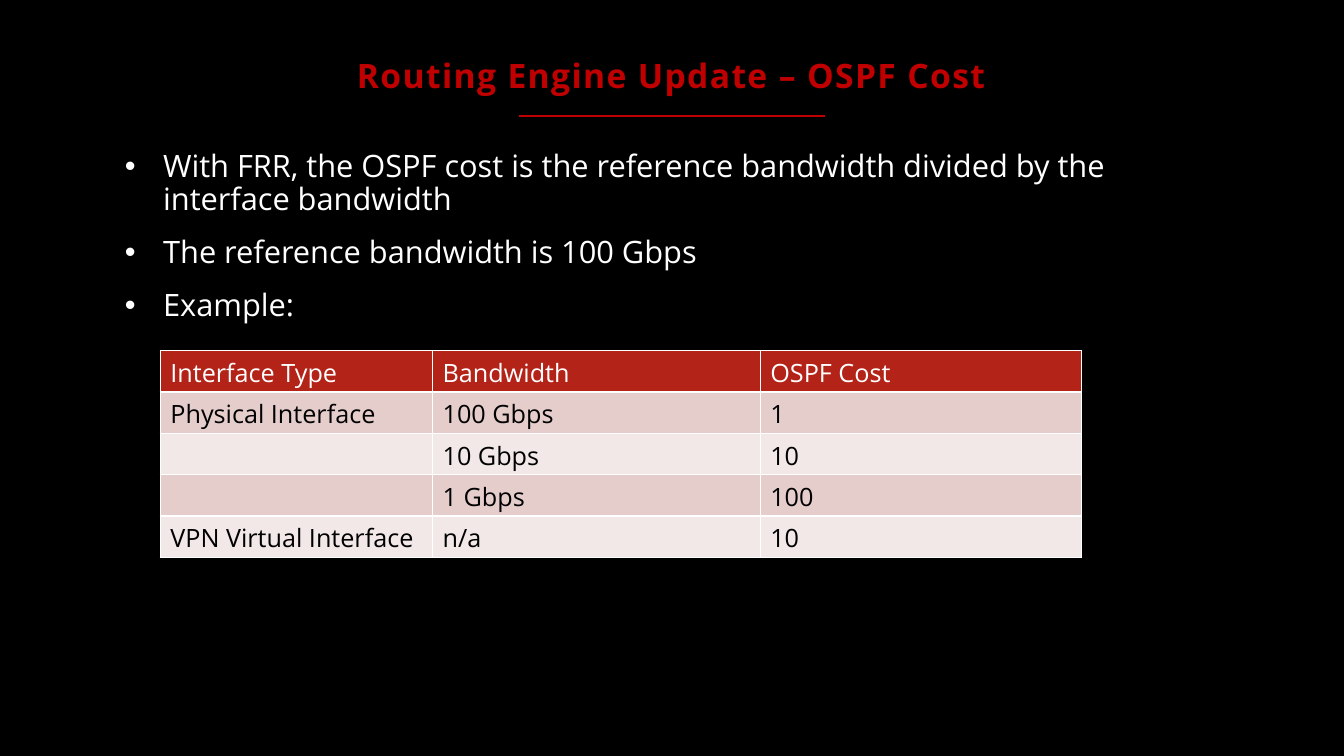
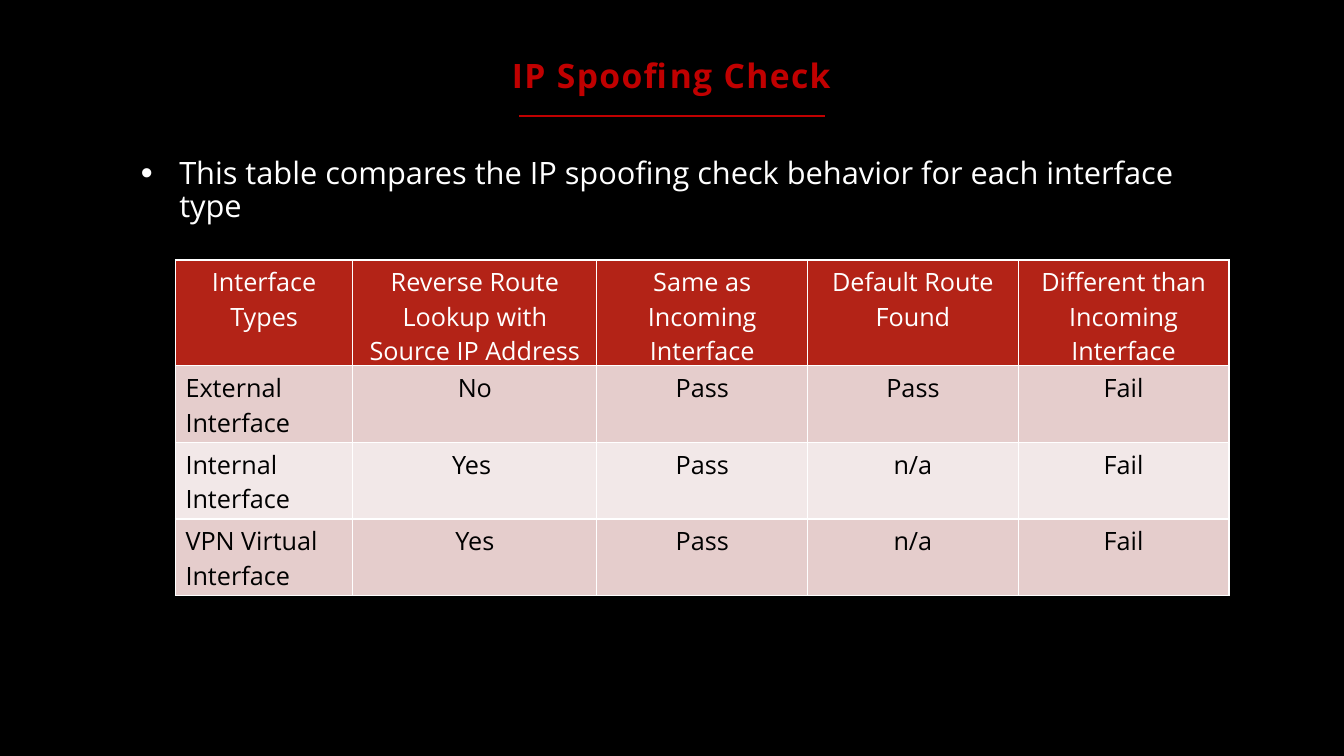
from lxml import etree
from pptx import Presentation
from pptx.dml.color import RGBColor
from pptx.enum.shapes import MSO_CONNECTOR
from pptx.enum.text import MSO_ANCHOR, PP_ALIGN
from pptx.oxml.ns import qn
from pptx.util import Inches, Pt

FONT = "Open Sans"
COLORS = {
    "back": "000000",
    "title": "C00000",
    "text": "FFFFFF",
    "head": "B32317",
    "odd": "E5CDCC",
    "even": "F2E8E8",
    "cell": "000000",
    "grid": "FFFFFF",
}


def color(name):
    return RGBColor.from_string(COLORS[name])


def style(par, size, tint, bold=False):
    for run in par.runs:
        run.font.name = FONT
        run.font.size = Pt(size)
        run.font.bold = bold
        run.font.color.rgb = color(tint)


def add_color(parent, name):
    etree.SubElement(parent, qn("a:srgbClr"), val=COLORS[name])


def add_box(slide, box):
    return slide.shapes.add_textbox(*map(Inches, box)).text_frame


def add_title(slide, text):
    """Place the heading and the rule under it."""
    frame = add_box(slide, (2.31, 0.52, 8.7, 0.5))
    frame.word_wrap = True
    frame.vertical_anchor = MSO_ANCHOR.MIDDLE
    par = frame.paragraphs[0]
    par.text = text
    par.alignment = PP_ALIGN.CENTER
    par.line_spacing = 0.9
    style(par, 24, "title", bold=True)
    par.runs[0]._r.get_or_add_rPr().set("spc", "100")

    ends = map(Inches, (5.15, 1.15, 8.18, 1.15))
    rule = slide.shapes.add_connector(MSO_CONNECTOR.STRAIGHT, *ends)
    rule.line.color.rgb = color("title")
    rule.line.width = Pt(1)
    etree.SubElement(rule._element.spPr, qn("a:effectLst"))


def add_bullet(par, scale):
    props = par._p.get_or_add_pPr()
    props.set("marL", str(Inches(0.38)))
    props.set("indent", str(-Inches(0.38)))
    add_color(etree.SubElement(props, qn("a:buClr")), "text")
    etree.SubElement(props, qn("a:buSzPct"), val=str(scale * 1000))
    etree.SubElement(props, qn("a:buFont"), typeface="Arial")
    etree.SubElement(props, qn("a:buChar"), char="•")


def add_list(slide, box, items, after, scale=100):
    """Place bulleted items; scale is the bullet size in percent."""
    frame = add_box(slide, box)
    frame.word_wrap = True
    frame.text = "\n".join(items)
    for par in frame.paragraphs:
        add_bullet(par, scale)
        par.line_spacing = 0.9
        par.space_after = Pt(after)
        style(par, 22, "text")


def add_grid(cell):
    """Draw the four borders, which must precede the fill in the XML."""
    props = cell._tc.get_or_add_tcPr()
    for spot, side in enumerate(("lnL", "lnR", "lnT", "lnB")):
        line = etree.Element(qn(f"a:{side}"), w=str(Pt(1)))
        add_color(etree.SubElement(line, qn("a:solidFill")), "grid")
        props.insert(spot, line)


def add_table(slide, left, top, widths, heights, rows, centred=False):
    """Place a table; centred applies to all but the row labels."""
    size = map(Inches, (left, top, sum(widths), sum(heights)))
    table = slide.shapes.add_table(len(rows), len(widths), *size).table
    for col, width in zip(table.columns, widths):
        col.width = Inches(width)
    for row, height in zip(table.rows, heights):
        row.height = Inches(height)
    for i, row in enumerate(rows):
        fill = "head" if i == 0 else "odd" if i % 2 else "even"
        for j, text in enumerate(row):
            cell = table.cell(i, j)
            cell.text = text
            cell.fill.solid()
            cell.fill.fore_color.rgb = color(fill)
            add_grid(cell)
            par = cell.text_frame.paragraphs[0]
            if centred and (i == 0 or j > 0):
                par.alignment = PP_ALIGN.CENTER
            style(par, 18, "cell" if i else "text")


def add_slide(prs, title):
    slide = prs.slides.add_slide(prs.slide_layouts[6])
    add_title(slide, title)
    return slide


def cost_slide(prs):
    slide = add_slide(prs, "Routing Engine Update – OSPF Cost")
    items = [
        "With FRR, the OSPF cost is the reference bandwidth divided by the "
        "interface bandwidth",
        "The reference bandwidth is 100 Gbps",
        "Example:",
    ]
    add_list(slide, (1.14, 1.45, 11.06, 5.47), items, after=14)
    rows = [
        ("Interface Type", "Bandwidth", "OSPF Cost"),
        ("Physical Interface", "100 Gbps", "1"),
        ("", "10 Gbps", "10"),
        ("", "1 Gbps", "100"),
        ("VPN Virtual Interface", "n/a", "10"),
    ]
    add_table(slide, 1.59, 3.48, (2.7, 3.25, 3.19), [0.41] * 5, rows)


def spoof_slide(prs):
    slide = add_slide(prs, "IP Spoofing Check")
    items = ["This table compares the IP spoofing check behavior for each "
             "interface type"]
    add_list(slide, (1.3, 1.52, 11.06, 5.2), items, after=9, scale=110)
    rows = [
        ("Interface Types", "Reverse Route Lookup with Source IP Address",
         "Same as Incoming Interface", "Default Route Found",
         "Different than Incoming Interface"),
        ("External Interface", "No", "Pass", "Pass", "Fail"),
        ("Internal Interface", "Yes ", "Pass", "n/a", "Fail"),
        ("VPN Virtual Interface", "Yes", "Pass", "n/a", "Fail"),
    ]
    widths = [1.76, 2.42] + [2.09] * 3
    heights = [1.05] + [0.76] * 3
    add_table(slide, 1.74, 2.58, widths, heights, rows, centred=True)


def main():
    prs = Presentation()
    prs.slide_width = Inches(13.33)
    prs.slide_height = Inches(7.5)
    back = prs.slide_master.background.fill
    back.solid()
    back.fore_color.rgb = color("back")
    cost_slide(prs)
    spoof_slide(prs)
    prs.save("out.pptx")


if __name__ == "__main__":
    main()
